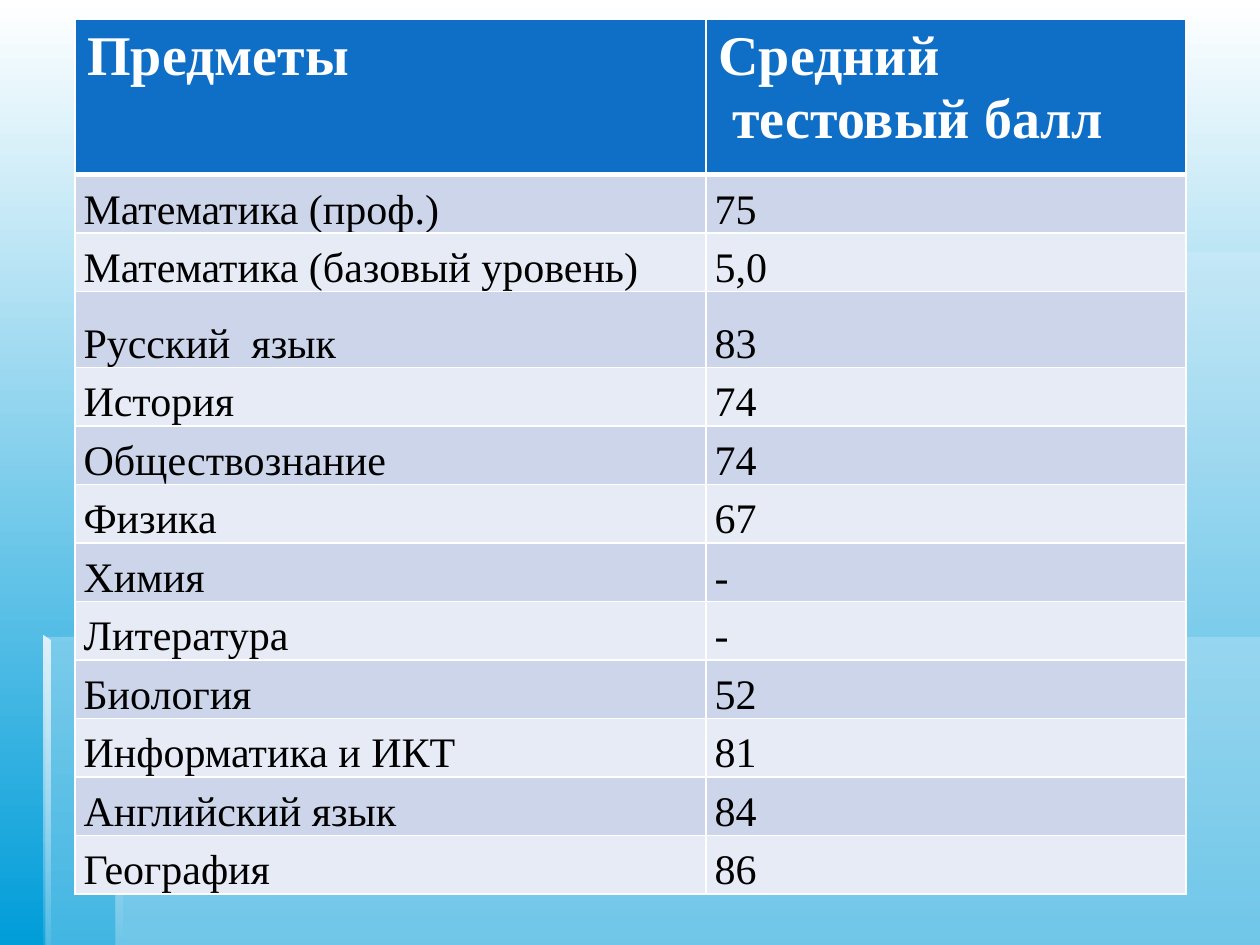
"""Build a slide with a table of average test scores by subject."""
from lxml import etree
from pptx import Presentation
from pptx.dml.color import RGBColor
from pptx.enum.text import MSO_ANCHOR
from pptx.oxml.ns import qn
from pptx.util import Pt

BOTTOM = MSO_ANCHOR.BOTTOM
TOP = MSO_ANCHOR.TOP

THEME = {
    "font": "Times New Roman", "header_size": 32, "body_size": 24,
    "header_text": "FFFFFF", "body_text": "000000", "border": "FFFFFF",
    "header_fill": "0F6FC6", "bands": ("CCD5EA", "E7EBF5"),
    "sky": (("FFFFFF", 100), ("009DD9", 100)),
    "panel": ("DBEFF9", 30),
    "shelf": (("DBEFF9", 0), ("C9DBE4", 100)),
    "upper_edge": (("E0F1FA", 100), ("DBEFF9", 100)),
    "middle_edge": (("E0F1FA", 100), ("DBEFF9", 0)),
    "left_edge": (("E0F1FA", 100), ("DBEFF9", 10)),
}
WIDTH, HEIGHT = 720, 540
DOWN, ACROSS = 270, 0

HEADER = ("Предметы", "Средний\n тестовый балл")
SCORES = [
    ("Математика (проф.)", "75"),
    ("Математика (базовый уровень)", "5,0"),
    ("Русский  язык", "83"),
    ("История", "74"),
    ("Обществознание", "74"),
    ("Физика", "67"),
    ("Химия", "-"),
    ("Литература", "-"),
    ("Биология", "52"),
    ("Информатика и ИКТ", "81"),
    ("Английский язык", "84"),
    ("География", "86"),
]
TABLE_LEFT, TABLE_TOP = 42.75, 11.2
COLUMN_WIDTHS = (360.6, 274.4)
HEADER_HEIGHT, ROW_HEIGHT, TALL_ROW_HEIGHT = 88.6, 33.43, 43.4
TALL_ROW = 3

PANELS = [
    [(66, 363.6), (66, HEIGHT), (WIDTH, HEIGHT), (WIDTH, 363.6)],
    [(67.5, 364), (26, 364), (26, HEIGHT), (WIDTH, HEIGHT), (WIDTH, 144), (67.5, 144)],
]
EDGES = [
    ("shelf", ACROSS, [(66, 144), (66, 147.5), (641.5, 147.5), (641.5, 144)]),
    ("upper_edge", DOWN, [(66, 144), (66, 367), (69.5, 367), (69.3, 147), (66, 144)]),
    ("middle_edge", DOWN, [(65.7, HEIGHT), (69.5, HEIGHT), (69.3, 366), (65.7, 363)]),
    ("shelf", ACROSS, [(25, 363), (25, 366.5), (385, 366.5), (385, 363)]),
    ("left_edge", DOWN, [(25, 363), (25, HEIGHT), (29, HEIGHT), (29, 366.5)]),
]


def set_gradient(fill, stops, angle):
    fill.gradient()
    fill.gradient_angle = angle
    for stop, (color, opacity) in zip(fill.gradient_stops, stops):
        stop.color.rgb = RGBColor.from_string(color)
    return fill


def set_opacity(parent, opacities):
    for color, opacity in zip(parent.iter(qn("a:srgbClr")), opacities):
        if opacity < 100:
            etree.SubElement(color, qn("a:alpha"), val=str(opacity * 1000))


def add_outline(slide, points):
    builder = slide.shapes.build_freeform(*points[0], scale=Pt(1))
    builder.add_line_segments(points[1:], close=True)
    shape = builder.convert_to_shape()
    shape.shadow.inherit = False
    shape.line.fill.background()
    return shape


def add_backdrop(slide):
    set_gradient(slide.background.fill, THEME["sky"], DOWN)
    color, opacity = THEME["panel"]
    for points in PANELS:
        shape = add_outline(slide, points)
        shape.fill.solid()
        shape.fill.fore_color.rgb = RGBColor.from_string(color)
        set_opacity(shape._element.spPr, [opacity])
    for name, angle, points in EDGES:
        shape = add_outline(slide, points)
        set_gradient(shape.fill, THEME[name], angle)
        set_opacity(shape._element.spPr, [stop[1] for stop in THEME[name]])


def set_borders(cell, widths):
    properties = cell._tc.get_or_add_tcPr()
    for side, width in zip("LRTB", widths):
        line = etree.SubElement(properties, qn(f"a:ln{side}"), w=str(Pt(width)))
        solid = etree.SubElement(line, qn("a:solidFill"))
        etree.SubElement(solid, qn("a:srgbClr"), val=THEME["border"])


def fill_cell(cell, text, row):
    is_header = row == 0
    top_width = 3 if row == 1 else 1
    set_borders(cell, (1, 1, top_width, 3 if is_header else 1))
    cell.fill.solid()
    color = THEME["header_fill"] if is_header else THEME["bands"][(row - 1) % 2]
    cell.fill.fore_color.rgb = RGBColor.from_string(color)
    cell.vertical_anchor = TOP if is_header else BOTTOM
    if not is_header:
        cell.margin_left = cell.margin_right = Pt(5)
        cell.margin_top = cell.margin_bottom = 0
    cell.text = text
    kind = "header" if is_header else "body"
    for paragraph in cell.text_frame.paragraphs:
        if not is_header:
            paragraph.line_spacing = 1.15
            paragraph.space_after = Pt(10)
        paragraph.font.name = THEME["font"]
        paragraph.font.size = Pt(THEME[f"{kind}_size"])
        paragraph.font.bold = is_header
        paragraph.font.color.rgb = RGBColor.from_string(THEME[f"{kind}_text"])


def add_scores(slide):
    rows = [HEADER, *SCORES]
    heights = [HEADER_HEIGHT] + [ROW_HEIGHT] * len(SCORES)
    heights[TALL_ROW] = TALL_ROW_HEIGHT
    table = slide.shapes.add_table(
        len(rows), len(HEADER), Pt(TABLE_LEFT), Pt(TABLE_TOP),
        Pt(sum(COLUMN_WIDTHS)), Pt(sum(heights))).table
    for column, width in zip(table.columns, COLUMN_WIDTHS):
        column.width = Pt(width)
    for index, (values, height) in enumerate(zip(rows, heights)):
        table.rows[index].height = Pt(height)
        for column, text in enumerate(values):
            fill_cell(table.cell(index, column), text, index)


def main():
    presentation = Presentation()
    presentation.slide_width, presentation.slide_height = Pt(WIDTH), Pt(HEIGHT)
    slide = presentation.slides.add_slide(presentation.slide_layouts[6])
    add_backdrop(slide)
    add_scores(slide)
    presentation.save("out.pptx")


if __name__ == "__main__":
    main()
